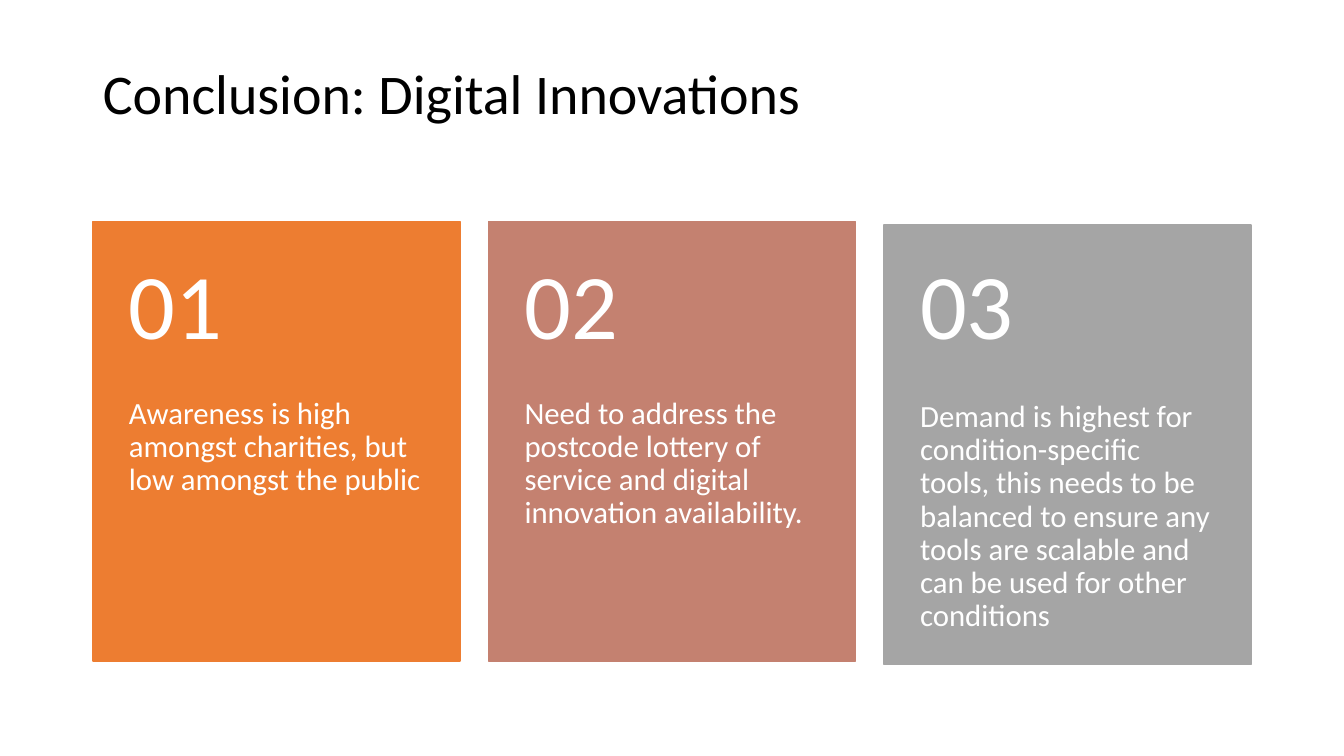
from pptx import Presentation
from pptx.dml.color import RGBColor
from pptx.enum.shapes import MSO_SHAPE
from pptx.enum.text import MSO_ANCHOR, MSO_AUTO_SIZE, PP_ALIGN
from pptx.util import Cm, Pt

TITLE = "Conclusion: Digital Innovations"
CARDS = [
    ("01", "Awareness is high amongst charities, but low amongst the public", "orange", 0),
    ("02", "Need to address the postcode lottery of service and digital innovation availability.", "rose", 0),
    ("03", "Demand is highest for condition-specific tools, this needs to be balanced to ensure any "
           "tools are scalable and can be used for other conditions", "grey", 0.08),
]
COLOURS = {
    "orange": "ED7D31",
    "rose": "C48170",
    "grey": "A5A5A5",
    "white": "FFFFFF",
    "black": "000000",
}

LEFT, TOP = 2.34, 5.59
CARD_WIDTH, CARD_HEIGHT = 9.25, 11.07
CARD_PITCH = 9.97
NUMBER_HEIGHT = 4.43
SIDE_INSET, NUMBER_INSET = 0.91, 0.46


def colour(name):
    return RGBColor.from_string(COLOURS[name])


def apply(target, values):
    for name, value in values.items():
        setattr(target, name, value)


def write(shape, text, size, colour_name, frame_format):
    frame = shape.text_frame
    frame.text = text
    apply(frame, {"word_wrap": True, "auto_size": MSO_AUTO_SIZE.NONE, **frame_format})
    paragraph = frame.paragraphs[0]
    apply(paragraph, {"alignment": PP_ALIGN.LEFT, "line_spacing": 0.9})
    apply(paragraph.font, {"name": "Calibri", "size": Pt(size)})
    paragraph.font.color.rgb = colour(colour_name)


def add_text(slide, box, text, size, anchor, top_inset, bottom_inset):
    shape = slide.shapes.add_textbox(*map(Cm, box))
    write(shape, text, size, "white", {
        "vertical_anchor": anchor,
        "margin_left": Cm(SIDE_INSET),
        "margin_right": Cm(SIDE_INSET),
        "margin_top": Cm(top_inset),
        "margin_bottom": Cm(bottom_inset),
    })


def add_card(slide, index, number, message, fill, drop):
    left = LEFT + index * CARD_PITCH
    top = TOP + drop
    card = slide.shapes.add_shape(
        MSO_SHAPE.RECTANGLE, Cm(left), Cm(top), Cm(CARD_WIDTH), Cm(CARD_HEIGHT))
    card.shadow.inherit = False
    card.fill.solid()
    card.fill.fore_color.rgb = colour(fill)
    card.line.color.rgb = colour(fill)
    card.line.width = Pt(1)
    message_box = (left, top + NUMBER_HEIGHT, CARD_WIDTH, CARD_HEIGHT - NUMBER_HEIGHT)
    add_text(slide, message_box, message, 22, MSO_ANCHOR.TOP, 0, SIDE_INSET)
    number_box = (left, TOP, CARD_WIDTH, NUMBER_HEIGHT)
    add_text(slide, number_box, number, 66, MSO_ANCHOR.MIDDLE, NUMBER_INSET, NUMBER_INSET)


def main():
    presentation = Presentation()
    apply(presentation, {"slide_width": Cm(33.87), "slide_height": Cm(19.05)})
    slide = presentation.slides.add_slide(presentation.slide_layouts[5])
    title = slide.shapes.title
    apply(title, {"left": Cm(LEFT), "top": Cm(0.94), "width": Cm(29.18), "height": Cm(3)})
    write(title, TITLE, 40, "black", {"vertical_anchor": MSO_ANCHOR.MIDDLE})
    for index, card in enumerate(CARDS):
        add_card(slide, index, *card)
    presentation.save("out.pptx")


if __name__ == "__main__":
    main()
